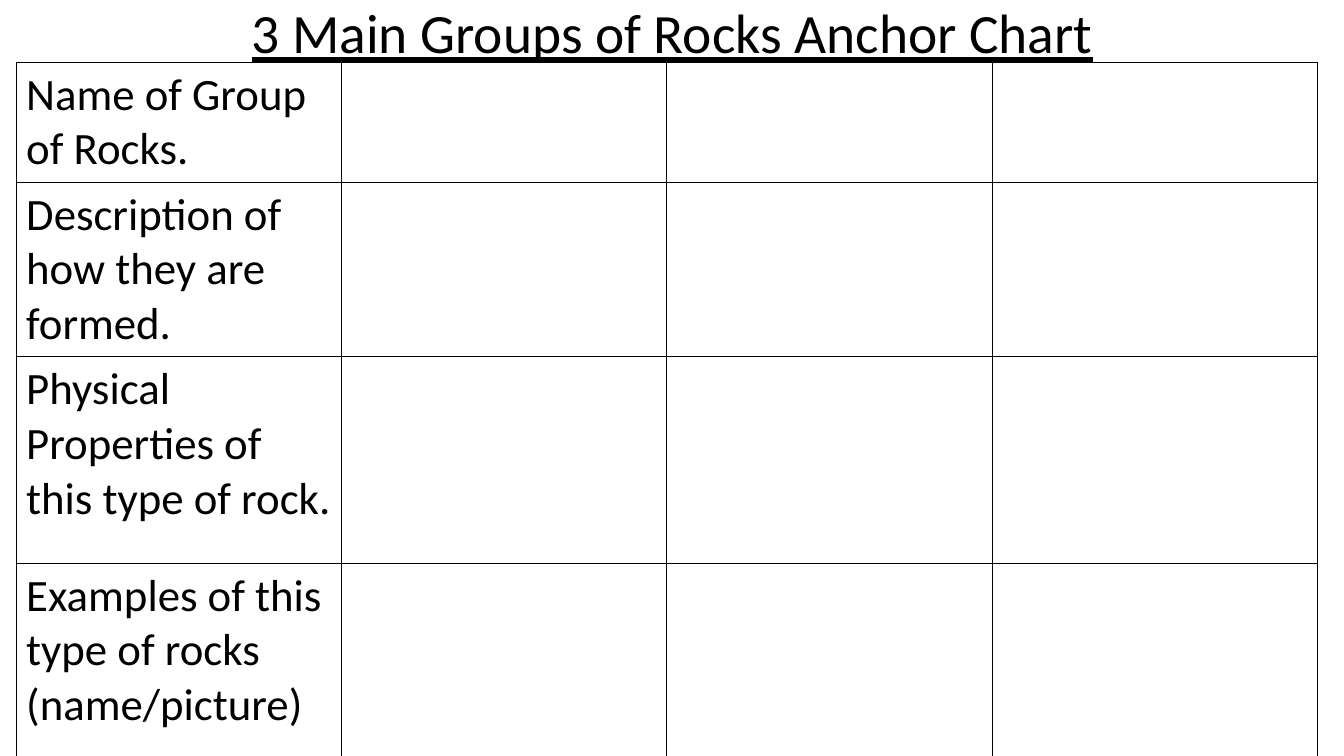
import pptx
import pptx.dml.color
import pptx.enum.text
import pptx.oxml
import pptx.oxml.ns
import pptx.util

BLACK = pptx.dml.color.RGBColor(0, 0, 0)
WHITE = pptx.dml.color.RGBColor(255, 255, 255)
TITLE = "3 Main Groups of Rocks Anchor Chart"
ROCK_ROWS = [
    ("Name of Group of Rocks.", 15.87),
    ("Description of how they are formed.", 23.07),
    ("Physical Properties of this type of rock.", 27.33),
    ("Examples of this type of rocks (name/picture)", 29.87),
]
COLUMN_COUNT = 4


class AnchorChart:
    """Style and current slide; lengths are percentages of the slide's size."""

    font_name = "Calibri"
    border_points = 1

    def __init__(self, deck):
        self.deck = deck
        self.slide = deck.slides.add_slide(deck.slide_layouts[6])
        self.slide.background.fill.solid()
        self.slide.background.fill.fore_color.rgb = WHITE

    def across(self, percent):
        return pptx.util.Emu(round(self.deck.slide_width * percent / 100))

    def down(self, percent):
        return pptx.util.Emu(round(self.deck.slide_height * percent / 100))

    def label(self, frame, text, size):
        para = frame.paragraphs[0]
        para.text = text
        para.font.name = self.font_name
        para.font.size = pptx.util.Pt(size)
        para.font.color.rgb = BLACK
        return para

    def title(self, text, left, top, width, height):
        box = self.slide.shapes.add_textbox(
            self.across(left), self.down(top), self.across(width), self.down(height))
        box.text_frame.word_wrap = True
        box.text_frame.vertical_anchor = pptx.enum.text.MSO_ANCHOR.MIDDLE
        para = self.label(box.text_frame, text, 39.6)
        para.alignment = pptx.enum.text.PP_ALIGN.CENTER
        para.line_spacing = 0.9
        para.font.underline = True

    def outline(self, cell):
        properties = cell._tc.get_or_add_tcPr()
        width = pptx.util.Pt(self.border_points)
        for position, side in enumerate(("lnL", "lnR", "lnT", "lnB")):
            properties.insert(position, pptx.oxml.parse_xml(
                f'<a:{side} {pptx.oxml.ns.nsdecls("a")} w="{width}"><a:solidFill>'
                f'<a:srgbClr val="{BLACK}"/></a:solidFill></a:{side}>'))

    def table(self, rows, column_count, left, top, width):
        total = sum(height for _, height in rows)
        table = self.slide.shapes.add_table(
            len(rows), column_count, self.across(left), self.down(top),
            self.across(width), self.down(total)).table
        table.first_row = False
        table.horz_banding = False
        for row, (text, height) in zip(table.rows, rows):
            row.height = self.down(height)
            self.label(row.cells[0].text_frame, text, 32)
            for cell in row.cells:
                cell.fill.background()
                self.outline(cell)


def main():
    deck = pptx.Presentation()
    deck.slide_width = pptx.util.Inches(13.33)
    deck.slide_height = pptx.util.Inches(7.5)
    chart = AnchorChart(deck)
    chart.title(TITLE, 6.9, 0, 86.27, 9.47)
    chart.table(ROCK_ROWS, COLUMN_COUNT, 1.2, 8.27, 96.85)
    deck.save("out.pptx")


if __name__ == "__main__":
    main()
